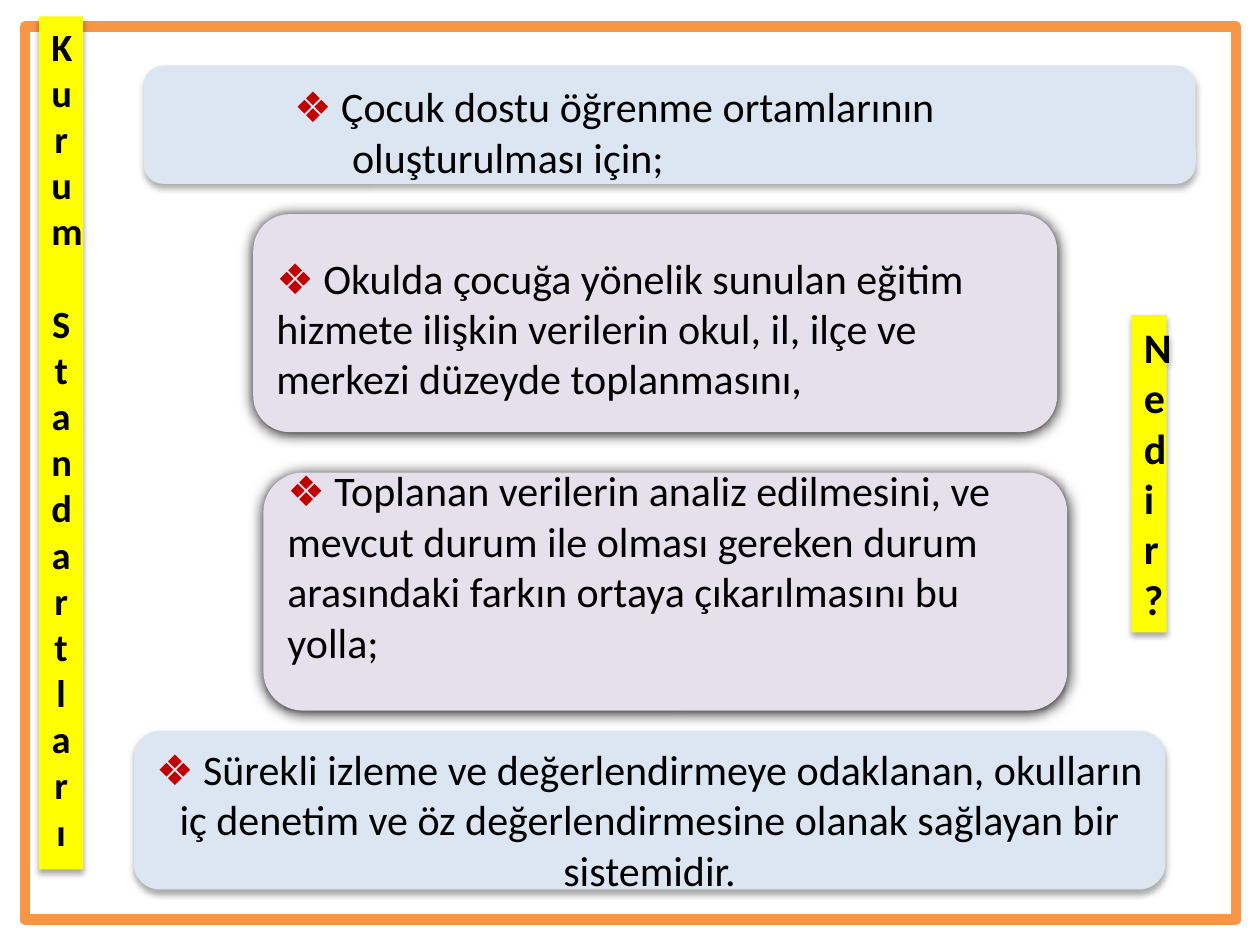
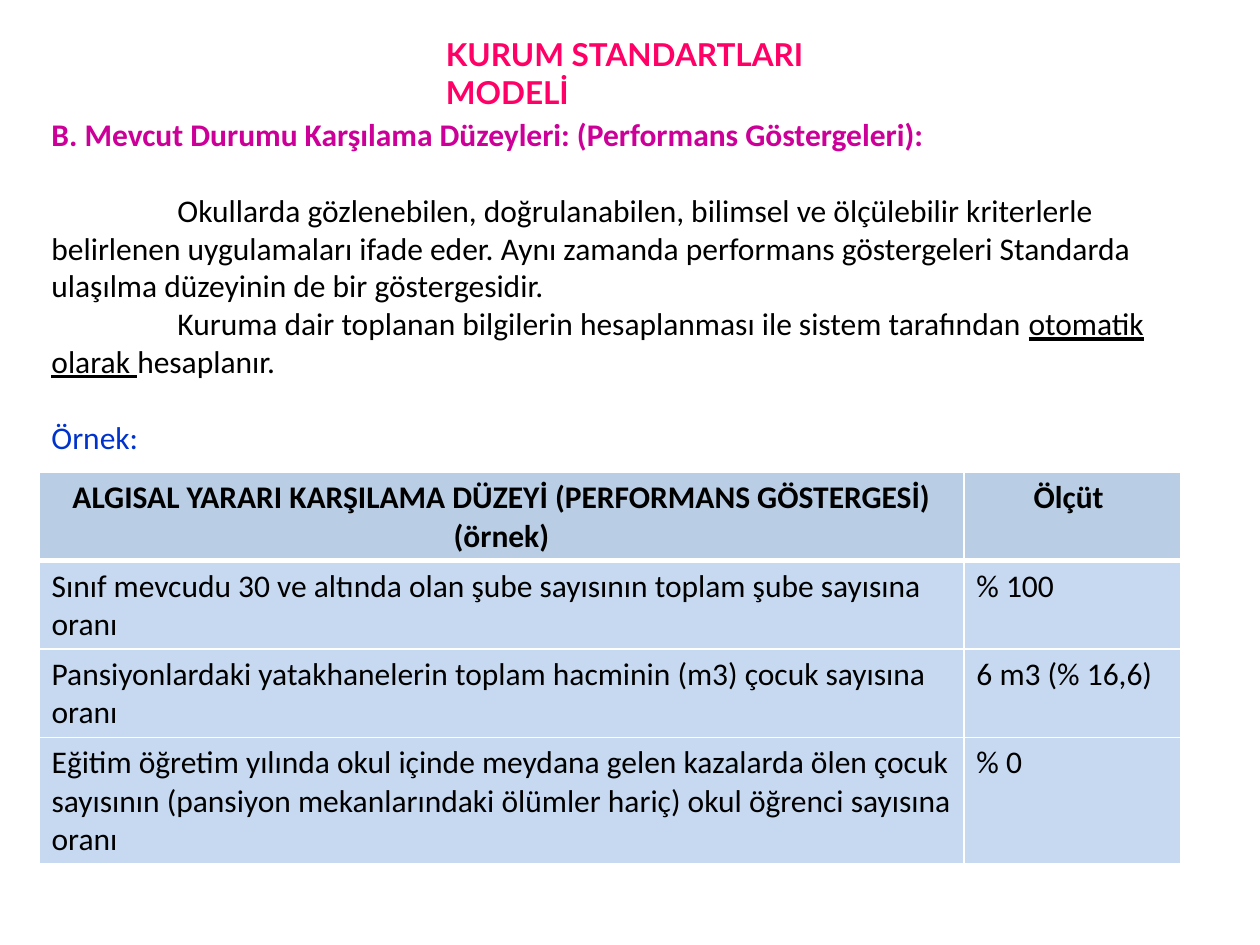
"""Builds two slides on school standards: a framed definition and an indicator table."""
from dataclasses import dataclass

from lxml import etree
from pptx import Presentation
from pptx.dml import color
from pptx.enum import shapes, text
from pptx.oxml import ns
from pptx.util import Inches, Pt

FACE = "Calibri"
BLACK, WHITE, RED = "000000", "FFFFFF", "C00000"
BLUE, LILAC, YELLOW, ORANGE = "DCE6F2", "E6E0EC", "FFFF00", "F79646"
LEFT, MID = text.PP_ALIGN.LEFT, text.PP_ALIGN.CENTER
TOP, HALF = text.MSO_ANCHOR.TOP, text.MSO_ANCHOR.MIDDLE
RECT, ROUND = shapes.MSO_SHAPE.RECTANGLE, shapes.MSO_SHAPE.ROUNDED_RECTANGLE
MARK = "❖ "


@dataclass
class Run:
    words: str
    size: float = 18
    ink: str = BLACK
    bold: bool = False
    line: bool = False
    face: str = FACE


@dataclass
class Para:
    runs: list[Run]
    align: int = LEFT
    left: float = 0
    first: float = 0
    before: float = 0
    after: float = 0


@dataclass
class Shade:
    alpha: int
    blur: float
    drop: float


SOFT, DEEP = Shade(32, 3.5, 2.2), Shade(100, 8.5, 1)


@dataclass
class Panel:
    box: tuple
    fill: str
    shade: Shade
    paras: list[Para]
    shift: float = 0
    kind: int = ROUND
    anchor: int = HALF
    fit: int = text.MSO_AUTO_SIZE.NONE


def tint(code: str) -> color.RGBColor:
    return color.RGBColor.from_string(code)


def assign(item, values: dict) -> None:
    for name, value in values.items():
        setattr(item, name, value)


def node(parent, tag: str, **attrs):
    return etree.SubElement(parent, ns.qn(tag), {k: str(v) for k, v in attrs.items()})


def write(frame, paras: list[Para]) -> None:
    for i, para in enumerate(paras):
        par = frame.add_paragraph() if i else frame.paragraphs[0]
        assign(par, {"alignment": para.align, "space_before": Pt(para.before),
                     "space_after": Pt(para.after)})
        props = par._p.get_or_add_pPr()
        props.set("marL", str(Inches(para.left)))
        props.set("indent", str(Inches(para.first)))
        for run in para.runs:
            part = par.add_run()
            part.text = run.words
            assign(part.font, {"name": run.face, "size": Pt(run.size),
                               "bold": run.bold, "underline": run.line})
            part.font.color.rgb = tint(run.ink)


def block(slide, kind: int, box: tuple, fill: str):
    shape = slide.shapes.add_shape(kind, *map(Inches, box))
    shape.shadow.inherit = False
    shape.fill.solid()
    shape.fill.fore_color.rgb = tint(fill)
    shape.line.fill.background()
    return shape


def cast(shape, shade: Shade) -> None:
    glow = shape._element.spPr.find(ns.qn("a:effectLst"))
    drop = node(glow, "a:outerShdw", blurRad=Pt(shade.blur), dist=Pt(shade.drop),
                dir=90 * 60000, rotWithShape=0)
    node(node(drop, "a:srgbClr", val=BLACK), "a:alpha", val=shade.alpha * 1000)


def panel(slide, spec_: Panel) -> None:
    shape = block(slide, spec_.kind, spec_.box, spec_.fill)
    cast(shape, spec_.shade)
    assign(shape.text_frame, {
        "word_wrap": True, "vertical_anchor": spec_.anchor, "auto_size": spec_.fit,
        "margin_top": Inches(0.05 + max(spec_.shift, 0)),
        "margin_bottom": Inches(0.05 + max(-spec_.shift, 0))})
    write(shape.text_frame, spec_.paras)


def note(slide, box: tuple, paras: list[Para]) -> None:
    frame = slide.shapes.add_textbox(*map(Inches, box)).text_frame
    frame.word_wrap = True
    write(frame, paras)


def point(words: str, **layout) -> Para:
    return Para([Run(MARK, 24, RED, True), Run(words, 24)], **layout)


def strip(box: tuple, size: float, *words: str) -> Panel:
    paras = [Para([Run(word, size, bold=True)], MID) for word in words]
    return Panel(box, YELLOW, SOFT, paras, kind=RECT, anchor=TOP,
                 fit=text.MSO_AUTO_SIZE.SHAPE_TO_FIT_TEXT)


def edge(cell, widths: dict) -> None:
    props = cell._tc.get_or_add_tcPr()
    for i, (side, width) in enumerate(widths.items()):
        line = node(props, f"a:ln{side}", w=Pt(width))
        node(node(line, "a:solidFill"), "a:srgbClr", val=WHITE)
        props.insert(i, line)


def grid(slide, box: tuple, wide: list, high: list, rows: list) -> None:
    table = slide.shapes.add_table(len(rows), len(wide), *map(Inches, box)).table
    for col, width in zip(table.columns, wide):
        col.width = Inches(width)
    for r, (row, height) in enumerate(zip(rows, high)):
        table.rows[r].height = Inches(height)
        head = r == 0
        for c, words in enumerate(row):
            cell = table.cell(r, c)
            cell.fill.solid()
            cell.fill.fore_color.rgb = tint("B9CDE5" if head else "C6D9F1")
            edge(cell, {"L": 1, "R": 1, "T": 3 if r == 1 else 1, "B": 3 if head else 1})
            write(cell.text_frame, [Para([Run(words, bold=head)], MID if head else LEFT)])


PANELS = [
    Panel((1.14, 0.52, 8.35, 0.94), BLUE, SOFT, [
        point("Çocuk dostu öğrenme ortamlarının", left=1.05),
        Para([Run("oluşturulması için;", 24)], left=1.51)], 0.1),
    Panel((2.01, 1.7, 6.38, 1.73), LILAC, DEEP, [
        point("Okulda çocuğa yönelik sunulan eğitim hizmete ilişkin verilerin "
              "okul, il, ilçe ve merkezi düzeyde toplanmasını,")], 0.07),
    Panel((2.09, 3.75, 6.38, 1.89), LILAC, DEEP, [
        point("Toplanan verilerin analiz edilmesini, ve mevcut durum ile olması "
              "gereken durum arasındaki farkın ortaya çıkarılmasını bu yolla;")], -0.41),
    Panel((1.06, 5.8, 8.19, 1.26), BLUE, SOFT, [
        point("Sürekli izleme ve değerlendirmeye odaklanan, okulların iç denetim ve "
              "öz değerlendirmesine olanak sağlayan bir sistemidir.", align=MID)], 0.14),
    strip((0.31, 0.13, 0.35, 6.77), 22, "Kurum Standartları"),
    strip((8.98, 2.5, 0.28, 2.52), 24, "N", "edir?"),
]

TITLE = [Para([Run("KURUM STANDARTLARI MODELİ", ink="FF0066", bold=True, face="Lato")])]

BODY = [
    Para([Run("B. Mevcut Durumu Karşılama Düzeyleri: (Performans Göstergeleri):",
              ink="CC0099", bold=True)], after=22),
    Para([Run("Okullarda gözlenebilen, doğrulanabilen, bilimsel ve ölçülebilir kriterlerle "
              "belirlenen uygulamaları ifade eder. Aynı zamanda performans göstergeleri "
              "Standarda ulaşılma düzeyinin de bir göstergesidir.")], first=1),
    Para([Run("Kuruma dair toplanan bilgilerin hesaplanması ile sistem tarafından "),
          Run("otomatik olarak ", line=True), Run("hesaplanır.")], first=1),
    Para([Run("Örnek:", ink="0033CC")], before=22),
]

ROWS = [
    ("ALGISAL YARARI KARŞILAMA DÜZEYİ (PERFORMANS GÖSTERGESİ) (örnek)", "Ölçüt "),
    ("Sınıf mevcudu 30 ve altında olan şube sayısının toplam şube sayısına oranı", "% 100"),
    ("Pansiyonlardaki yatakhanelerin toplam hacminin (m3) çocuk sayısına oranı",
     "6 m3 (% 16,6)"),
    ("Eğitim öğretim yılında okul içinde meydana gelen kazalarda ölen çocuk sayısının "
     "(pansiyon mekanlarındaki ölümler hariç) okul öğrenci sayısına oranı", "% 0"),
]


def main() -> None:
    deck = Presentation()
    assign(deck, {"slide_width": Inches(10), "slide_height": Inches(7.5)})
    first, second = (deck.slides.add_slide(deck.slide_layouts[6]) for _ in range(2))

    border = block(first, RECT, (0.2, 0.21, 9.61, 7.09), WHITE)
    border.line.color.rgb = tint(ORANGE)
    border.line.width = Pt(6)
    for item in PANELS:
        panel(first, item)

    note(second, (3.44, 0.23, 3.81, 0.4), TITLE)
    grid(second, (0.31, 3.75, 9.06, 3.1), [7.34, 1.72], [0.7, 0.7, 0.7, 1], ROWS)
    note(second, (0.31, 0.86, 9.45, 2.82), BODY)
    deck.save("out.pptx")


if __name__ == "__main__":
    main()
